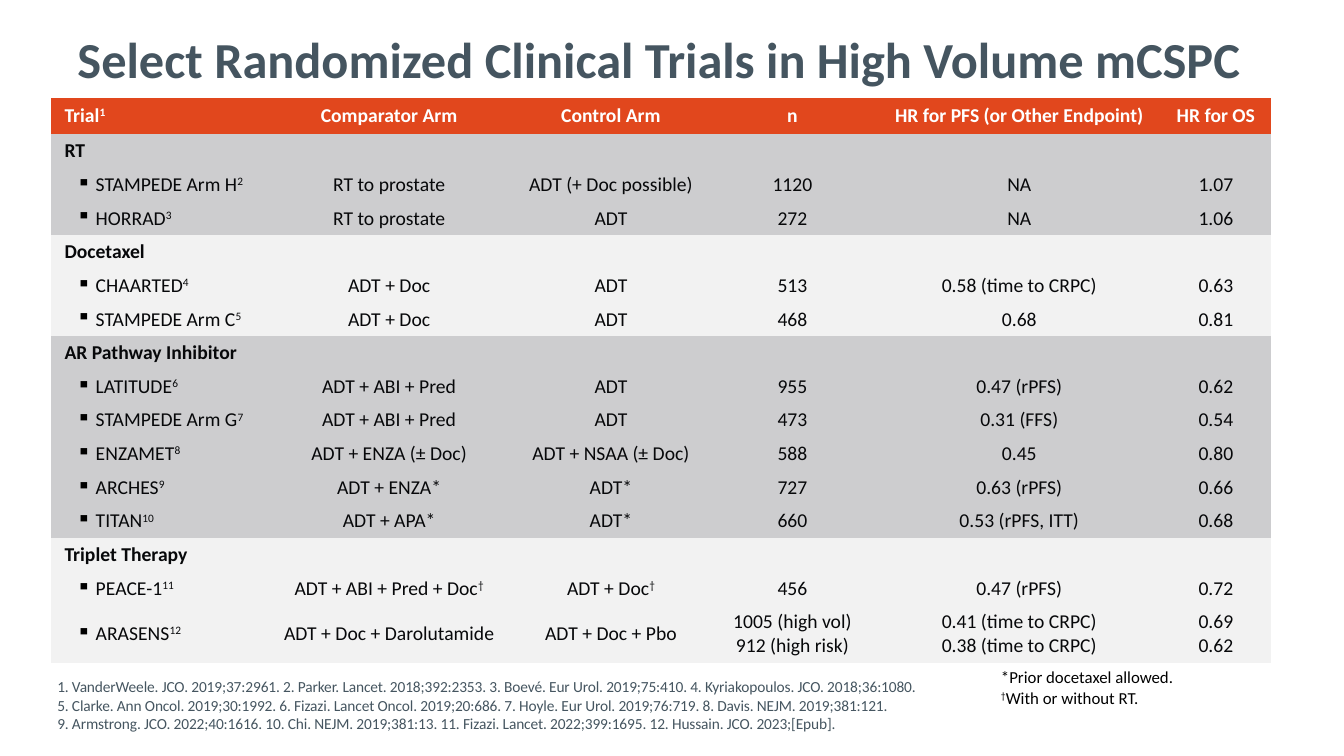
from lxml.etree import SubElement
from pptx import Presentation
from pptx.dml.color import RGBColor
from pptx.enum.text import MSO_ANCHOR, PP_ALIGN
from pptx.oxml.ns import qn
from pptx.util import Emu, Pt

SLATE, INK, BLACK, WHITE = "455560", "07080A", "000000", "FFFFFF"
ORANGE, GREY, PALE = "E1471D", "CDCDCF", "F2F2F2"
NO_GRID = "{2D5ABB26-0587-4C30-8999-92F81FD0307C}"

TITLE = "Select Randomized Clinical Trials in High Volume mCSPC"
WIDTHS = [210, 250, 190, 170, 280, 110]
HEADS = ["Trial^1", "Comparator Arm", "Control Arm", "n",
         "HR for PFS (or Other Endpoint)", "HR for OS"]
GROUPS = [
    ("RT", [
        ["STAMPEDE Arm H^2", "RT to prostate", "ADT (+ Doc possible)", "1120", "NA", "1.07"],
        ["HORRAD^3", "RT to prostate", "ADT", "272", "NA", "1.06"]]),
    ("Docetaxel", [
        ["CHAARTED^4", "ADT + Doc", "ADT", "513", "0.58 (time to CRPC)", "0.63"],
        ["STAMPEDE Arm C^5", "ADT + Doc", "ADT", "468", "0.68", "0.81"]]),
    ("AR Pathway Inhibitor", [
        ["LATITUDE^6", "ADT + ABI + Pred", "ADT", "955", "0.47 (rPFS)", "0.62"],
        ["STAMPEDE Arm G^7", "ADT + ABI + Pred", "ADT", "473", "0.31 (FFS)", "0.54"],
        ["ENZAMET^8", "ADT + ENZA (± Doc)", "ADT + NSAA (± Doc)", "588", "0.45", "0.80"],
        ["ARCHES^9", "ADT + ENZA*", "ADT*", "727", "0.63 (rPFS)", "0.66"],
        ["TITAN^10", "ADT + APA*", "ADT*", "660", "0.53 (rPFS, ITT)", "0.68"]]),
    ("Triplet Therapy", [
        ["PEACE-1^11", "ADT + ABI + Pred + Doc^†", "ADT + Doc^†", "456", "0.47 (rPFS)", "0.72"],
        ["ARASENS^12", "ADT + Doc + Darolutamide", "ADT + Doc + Pbo",
         "1005 (high vol)\n912 (high risk)",
         "0.41 (time to CRPC)\n0.38 (time to CRPC)", "0.69\n0.62"]]),
]
NOTES = "*Prior docetaxel allowed.\n^†^With or without RT."
SOURCES = "\v".join([
    "1. VanderWeele. JCO. 2019;37:2961. 2. Parker. Lancet. 2018;392:2353. "
    "3. Boevé. Eur Urol. 2019;75:410. 4. Kyriakopoulos. JCO. 2018;36:1080.",
    "5. Clarke. Ann Oncol. 2019;30:1992. 6. Fizazi. Lancet Oncol. 2019;20:686. "
    "7. Hoyle. Eur Urol. 2019;76:719. 8. Davis. NEJM. 2019;381:121.",
    "9. Armstrong. JCO. 2022;40:1616. 10. Chi. NEJM. 2019;381:13. "
    "11. Fizazi. Lancet. 2022;399:1695. 12. Hussain. JCO. 2023;[Epub]."])


def px(n):
    """Turn px, 100 to the inch, into EMU."""
    return Emu(n * 9144)


def color(code):
    """Turn a hex string into a colour."""
    return RGBColor.from_string(code)


def write(frame, text, size, tint, bold=False, align=PP_ALIGN.LEFT):
    """Fill a frame; every second part between ^ marks is superscript."""
    frame.text = text
    for para in frame.paragraphs:
        para.alignment = align
        parts = para.text.split("^")
        if len(parts) > 1:
            para.text = parts[0]
            for part in parts[1:]:
                para.add_run().text = part
        first = len(parts) - len(para.runs)
        for i, run in enumerate(para.runs, first):
            font = run.font
            font.name, font.size, font.bold = "Calibri", Pt(size), bold
            font.color.rgb = color(tint)
            if len(parts) > 1 and i % 2:
                font._element.set("baseline", "30000")


def add_text(slide, box, text, size, tint, bold=False, wrap=True, anchor=MSO_ANCHOR.TOP):
    """Place a text box and return its frame."""
    frame = slide.shapes.add_textbox(*map(px, box)).text_frame
    frame.word_wrap = wrap
    frame.vertical_anchor = anchor
    write(frame, text, size, tint, bold)
    return frame


def add_bullet(para):
    """Give a paragraph a black square bullet and hanging indent."""
    props = para._p.get_or_add_pPr()
    props.set("marL", str(px(31)))
    props.set("indent", str(px(-19)))
    tint = SubElement(props, qn("a:buClr"))
    SubElement(tint, qn("a:srgbClr")).set("val", BLACK)
    SubElement(props, qn("a:buChar")).set("char", "▪")


def fill_row(cells, texts, fill, tint=INK, bold=False, bullet=False):
    """Fill one table row."""
    for col, (cell, text) in enumerate(zip(cells, texts)):
        cell.fill.solid()
        cell.fill.fore_color.rgb = color(fill)
        cell.vertical_anchor = MSO_ANCHOR.MIDDLE
        cell.margin_left = cell.margin_right = px(13)
        cell.margin_top = cell.margin_bottom = px(5)
        align = PP_ALIGN.CENTER if col else PP_ALIGN.LEFT
        write(cell.text_frame, text, 14, tint, bold, align)
        para = cell.text_frame.paragraphs[0]
        if not text:
            SubElement(para._p, qn("a:endParaRPr")).set("sz", "1400")
        if bullet and col == 0:
            add_bullet(para)


def add_trials(slide, box):
    """Place the table of trials, banded by group."""
    count = 1 + sum(1 + len(trials) for _, trials in GROUPS)
    table = slide.shapes.add_table(count, len(HEADS), *map(px, box)).table
    table.first_row = table.horz_banding = False
    table._tbl.tblPr.find(qn("a:tableStyleId")).text = NO_GRID
    for col, width in zip(table.columns, WIDTHS):
        col.width = px(width)
    for row, height in zip(table.rows, [36] + [33] * (count - 2) + [57]):
        row.height = px(height)
    rows = iter(table.rows)
    fill_row(next(rows).cells, HEADS, ORANGE, WHITE, bold=True)
    for i, (name, trials) in enumerate(GROUPS):
        fill = PALE if i % 2 else GREY
        fill_row(next(rows).cells, [name] + [""] * (len(HEADS) - 1), fill, bold=True)
        for trial in trials:
            fill_row(next(rows).cells, trial, fill, bullet=True)


def add_title(slide, box):
    """Place the slide title."""
    add_text(slide, box, TITLE, 36, SLATE, bold=True).margin_top = px(2)


def add_sources(slide, box):
    """Place the list of references."""
    frame = add_text(slide, box, SOURCES, 11, SLATE, anchor=MSO_ANCHOR.BOTTOM)
    for run in frame.paragraphs[0].runs:
        run.font._element.set("spc", "-10")


def main():
    """Build and save the deck."""
    deck = Presentation()
    deck.slide_width, deck.slide_height = px(1333), px(750)
    slide = deck.slides.add_slide(deck.slide_layouts[6])
    add_title(slide, (67, 26, 1218, 121))
    add_trials(slide, (51, 97, 1210, 560))
    add_text(slide, (983, 657, 193, 50), NOTES, 12, BLACK, wrap=False)
    add_sources(slide, (47, 666, 954, 66))
    deck.save("out.pptx")


if __name__ == "__main__":
    main()
